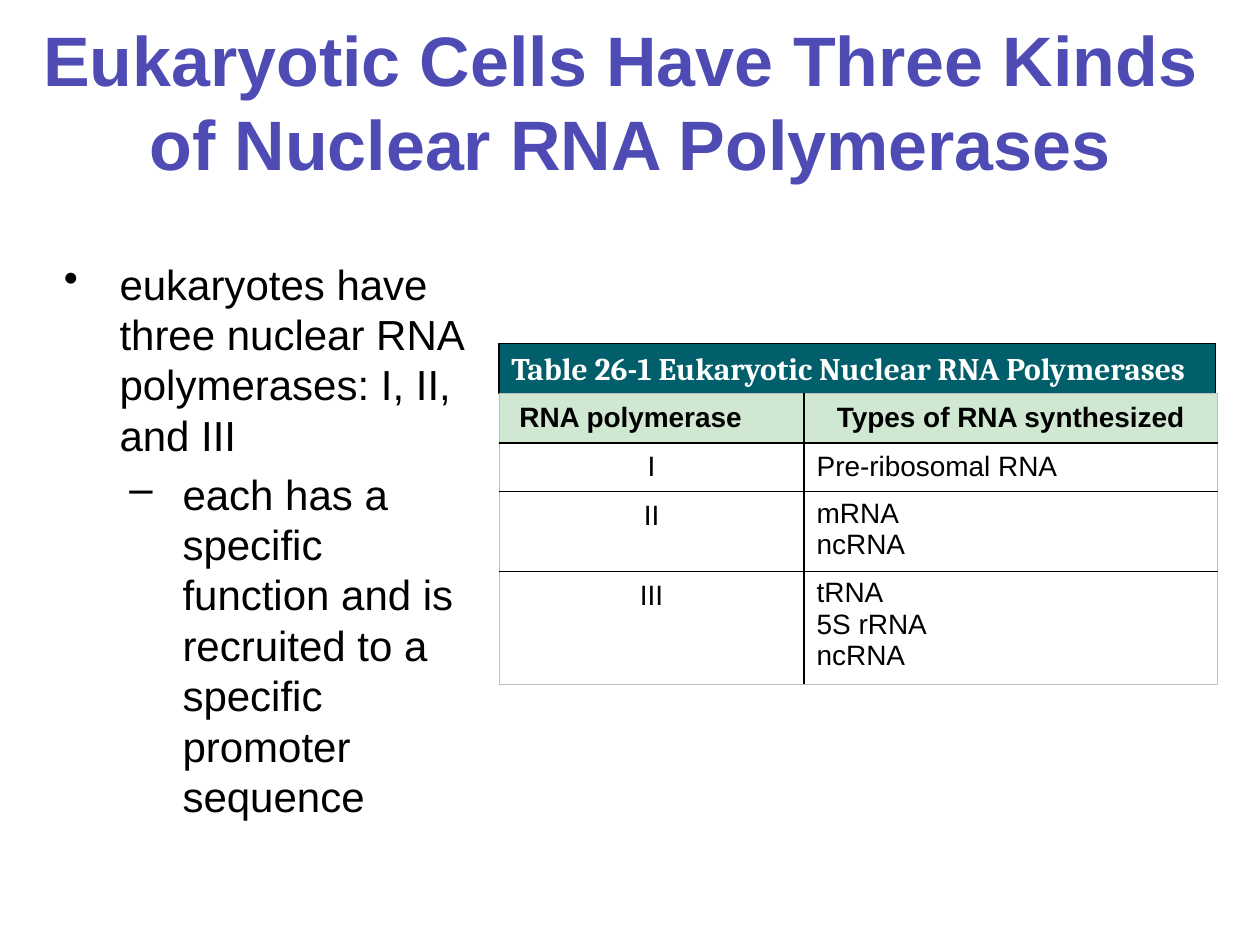
import pptx
import pptx.util
import pptx.dml.color
import pptx.enum.shapes
import pptx.enum.text
import pptx.oxml.ns
import lxml.etree

Cm = pptx.util.Cm
Pt = pptx.util.Pt
ALIGN = pptx.enum.text.PP_ALIGN
ANCHOR = pptx.enum.text.MSO_ANCHOR
COLOURS = {"title": "4E4CB4", "text": "000000", "banner": "005F6A",
           "banner text": "FFFFFF", "header": "D0E7D2",
           "inner": "000000", "outer": "BFBFBF"}


def colour(name):
    return pptx.dml.color.RGBColor.from_string(COLOURS[name])


def add_span(para, text, size, name="text", bold=False, font="Arial"):
    span = para.add_run()
    span.text = text
    span.font.name = font
    span.font.size = Pt(size)
    span.font.bold = bold
    span.font.color.rgb = colour(name)


deck = pptx.Presentation()
deck.slide_width, deck.slide_height = Cm(25.4), Cm(19.05)
page = deck.slides.add_slide(deck.slide_layouts[6])

# Title
box = page.shapes.add_textbox(Cm(0), Cm(0.43), Cm(25.4), Cm(3.18))
box.text_frame.word_wrap = True
box.text_frame.vertical_anchor = ANCHOR.MIDDLE
para = box.text_frame.paragraphs[0]
para.alignment = ALIGN.CENTER
add_span(para, "Eukaryotic Cells Have Three Kinds ", 40, "title", True)
para.add_line_break()
add_span(para, "of Nuclear RNA Polymerases", 40, "title", True)

# Bulleted text: level, mark, left margin, hanging indent, wording
points = [
    (0, "•", 1.27, -1.12,
     "eukaryotes have three nuclear RNA polymerases: I, II, and III"),
    (1, "–", 2.54, -1.07,
     "each has a specific function and is recruited to a specific promoter sequence"),
]
box = page.shapes.add_textbox(Cm(0.89), Cm(5.08), Cm(9.04), Cm(11.48))
box.text_frame.word_wrap = True
for index, (level, mark, margin, indent, text) in enumerate(points):
    para = box.text_frame.add_paragraph() if index else box.text_frame.paragraphs[0]
    para.level = level
    properties = para._p.get_or_add_pPr()
    properties.set("marL", str(Cm(margin)))
    properties.set("indent", str(Cm(indent)))
    bullet = lxml.etree.SubElement(properties, pptx.oxml.ns.qn("a:buChar"))
    bullet.set("char", mark)
    if index:
        para.space_before = Pt(4.8)
    add_span(para, text, 24)

# Table banner
banner = page.shapes.add_shape(pptx.enum.shapes.MSO_SHAPE.RECTANGLE,
                               Cm(10.06), Cm(6.92), Cm(14.45), Cm(1.02))
banner.shadow.inherit = False
banner.fill.solid()
banner.fill.fore_color.rgb = colour("banner")
banner.line.color.rgb = colour("inner")
banner.line.width = Pt(0.75)
banner.text_frame.word_wrap = True
banner.text_frame.vertical_anchor = ANCHOR.TOP
para = banner.text_frame.paragraphs[0]
para.alignment = ALIGN.LEFT
add_span(para, "Table 26-1 Eukaryotic Nuclear RNA Polymerases", 18,
         "banner text", True, "Cambria")

# Table of polymerases
rows = [
    (0.99, " RNA polymerase", ["Types of RNA synthesized"]),
    (0.98, "I", ["Pre-ribosomal RNA"]),
    (1.61, "II", ["mRNA", "ncRNA"]),
    (2.28, "III", ["tRNA", "5S rRNA", "ncRNA"]),
]
frame = page.shapes.add_table(len(rows), 2, Cm(10.06), Cm(7.94), Cm(14.48), Cm(5.86))
table = frame.table
table.first_row = table.horz_banding = False
table.columns[0].width, table.columns[1].width = Cm(6.15), Cm(8.33)

for r, (height, polymerase, products) in enumerate(rows):
    table.rows[r].height = Cm(height)
    for c, lines in enumerate([[polymerase], products]):
        cell = table.cell(r, c)
        for index, text in enumerate(lines):
            para = cell.text_frame.add_paragraph() if index else cell.text_frame.paragraphs[0]
            # The heading is centred on the right, the numerals on the left
            centred = (r == 0) == (c == 1)
            para.alignment = ALIGN.CENTER if centred else ALIGN.LEFT
            if len(lines) == 1:
                para.line_spacing = 1.07
            add_span(para, text, 16, bold=r == 0)

        # Black rules inside, thin grey ones around the edge
        edges = {"lnL": c == 0, "lnR": c == 1,
                 "lnT": r == 0, "lnB": r == len(rows) - 1}
        properties = cell._tc.get_or_add_tcPr()
        for tag, outside in edges.items():
            line = lxml.etree.SubElement(properties, pptx.oxml.ns.qn("a:" + tag))
            line.set("w", str(Pt(0.5 if outside else 1)))
            fill = lxml.etree.SubElement(line, pptx.oxml.ns.qn("a:solidFill"))
            shade = lxml.etree.SubElement(fill, pptx.oxml.ns.qn("a:srgbClr"))
            shade.set("val", COLOURS["outer" if outside else "inner"])

        if r == 0:
            cell.fill.solid()
            cell.fill.fore_color.rgb = colour("header")
        else:
            cell.fill.background()

deck.save("out.pptx")
